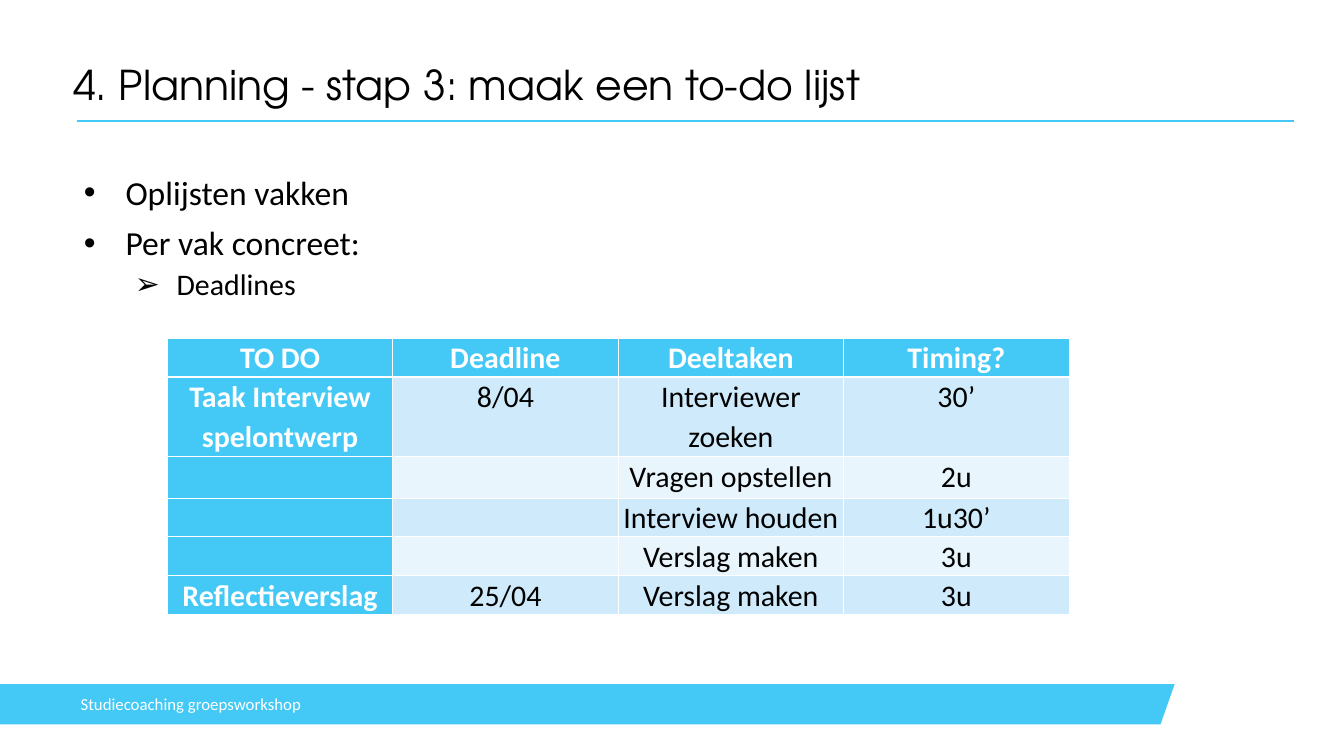
from lxml.etree import SubElement
from pptx import Presentation
from pptx.dml.color import RGBColor
from pptx.enum.shapes import MSO_CONNECTOR
from pptx.enum.text import MSO_ANCHOR, PP_ALIGN
from pptx.oxml.ns import qn
from pptx.util import Inches, Pt

# The slide is a grid of 20 columns by 11.25 rows of square units.
COLUMNS, ROWS = 20, 11.25
UNIT = Inches(1)

BLUE, PALE, PALER = "44C8F5", "CFEBFB", "E9F5FD"
BLACK, WHITE = "000000", "FFFFFF"

BULLETS = [
    ("Oplijsten vakken", 0),
    ("Per vak concreet:", 0),
    ("Deadlines", 1),
]
# Per level: bullet sign, left margin in units, size and space before in points
BULLET_LEVELS = [("•", 0.62, 36, 15), ("➢", 1.38, 32, 7.5)]
HANGING = 0.62

TODO_ROWS = [
    ("TO DO", "Deadline", "Deeltaken", "Timing?"),
    ("Taak Interview spelontwerp", "8/04", "Interviewer zoeken", "30’"),
    ("", "", "Vragen opstellen", "2u"),
    ("", "", "Interview houden", "1u30’"),
    ("", "", "Verslag maken", "3u"),
    ("Reflectieverslag", "25/04", "Verslag maken", "3u"),
]
TODO_HEIGHTS = [0.58, 1.18, 0.62, 0.58, 0.58, 0.58]


def units(*counts):
    return [round(count * UNIT) for count in counts]


def colour(hex_code):
    return RGBColor.from_string(hex_code)


def apply(target, formats):
    for attribute, value in formats.items():
        setattr(target, attribute, value)


def set_margins(target, side, end):
    side, end = units(side, end)
    apply(target, {"margin_left": side, "margin_right": side,
                   "margin_top": end, "margin_bottom": end})


def write(paragraph, text, size, hex_code, font="Calibri", bold=False, **layout):
    paragraph.text = text
    apply(paragraph, layout)
    run_font = paragraph.runs[0].font
    apply(run_font, {"name": font, "size": Pt(size), "bold": bold})
    run_font.color.rgb = colour(hex_code)


def add_frame(slide, box, side=0, end=0, anchor=MSO_ANCHOR.TOP):
    frame = slide.shapes.add_textbox(*units(*box)).text_frame
    apply(frame, {"word_wrap": True, "vertical_anchor": anchor})
    set_margins(frame, side, end)
    return frame


def add_heading(slide, box):
    left, top, width, height = box
    frame = add_frame(slide, box)
    write(frame.paragraphs[0], "4. Planning - stap 3: maak een to-do lijst",
          44, BLACK, "TeX Gyre Adventor", line_spacing=0.9)
    rule_y = top + height + 0.14
    rule = slide.shapes.add_connector(
        MSO_CONNECTOR.STRAIGHT,
        *units(left + 0.05, rule_y, left + width + 0.03, rule_y))
    rule.line.color.rgb = colour(BLUE)
    rule.line.width = Pt(2.25)
    SubElement(rule._element.spPr, qn("a:effectLst"))


def add_bullets(slide, box):
    frame = add_frame(slide, box, side=0.1, end=0.05)
    for index, (text, level) in enumerate(BULLETS):
        sign, margin, size, before = BULLET_LEVELS[level]
        paragraph = frame.add_paragraph() if index else frame.paragraphs[0]
        properties = paragraph._p.get_or_add_pPr()
        for name, length in zip(("marL", "indent"), units(margin, -HANGING)):
            properties.set(name, str(length))
        SubElement(properties, qn("a:buFont")).set("typeface", "Arial")
        SubElement(properties, qn("a:buChar")).set("char", sign)
        write(paragraph, text, size, BLACK, level=level, line_spacing=0.9,
              space_before=Pt(before if index else 0))


def add_borders(cell, widths):
    """Draw white borders; widths are points for left, right, top and bottom."""
    properties = cell._tc.get_or_add_tcPr()
    for side, width in zip("LRTB", widths):
        line = SubElement(properties, qn(f"a:ln{side}"), w=str(int(Pt(width))))
        fill = SubElement(line, qn("a:solidFill"))
        SubElement(fill, qn("a:srgbClr"), val=WHITE)


def add_todo_table(slide, box):
    column_count = len(TODO_ROWS[0])
    table = slide.shapes.add_table(
        len(TODO_ROWS), column_count, *units(*box)).table
    for column in table.columns:
        column.width, = units(box[2] / column_count)
    for r, (texts, height) in enumerate(zip(TODO_ROWS, TODO_HEIGHTS)):
        table.rows[r].height, = units(height)
        for c, text in enumerate(texts):
            cell = table.cell(r, c)
            is_header = r == 0 or c == 0
            set_margins(cell, 0.07, 0)
            add_borders(cell, (1, 1, 3 if r == 1 else 1, 3 if r == 0 else 1))
            cell.fill.solid()
            cell.fill.fore_color.rgb = colour(
                BLUE if is_header else PALE if r % 2 else PALER)
            if text:
                write(cell.text_frame.paragraphs[0], text, 32,
                      WHITE if is_header else BLACK, bold=is_header,
                      alignment=PP_ALIGN.CENTER, line_spacing=1.07,
                      space_after=Pt(8))


def add_footer(slide, box):
    left, top, width, height = box
    right, bottom, slant = left + width, top + height, 0.21
    outline = slide.shapes.build_freeform(*units(left, top))
    outline.add_line_segments([
        units(right, top), units(right - slant, bottom), units(left, bottom)])
    band = outline.convert_to_shape()
    band.shadow.inherit = False
    band.fill.solid()
    band.fill.fore_color.rgb = colour(BLUE)
    band.line.fill.background()
    frame = add_frame(slide, (left + 1.2, top, 6.75, height),
                      anchor=MSO_ANCHOR.MIDDLE)
    write(frame.paragraphs[0], "Studiecoaching groepsworkshop", 18, WHITE)


def main():
    presentation = Presentation()
    presentation.slide_width, presentation.slide_height = units(COLUMNS, ROWS)
    slide = presentation.slides.add_slide(presentation.slide_layouts[6])
    add_footer(slide, (0, 10.18, 17.48, 0.6))
    add_heading(slide, (1.09, 0.97, 18.13, 0.69))
    add_bullets(slide, (1.15, 2.57, 18.13, 2.3))
    add_todo_table(slide, (2.49, 5.03, 13.42, sum(TODO_HEIGHTS)))
    presentation.save("out.pptx")


if __name__ == "__main__":
    main()
